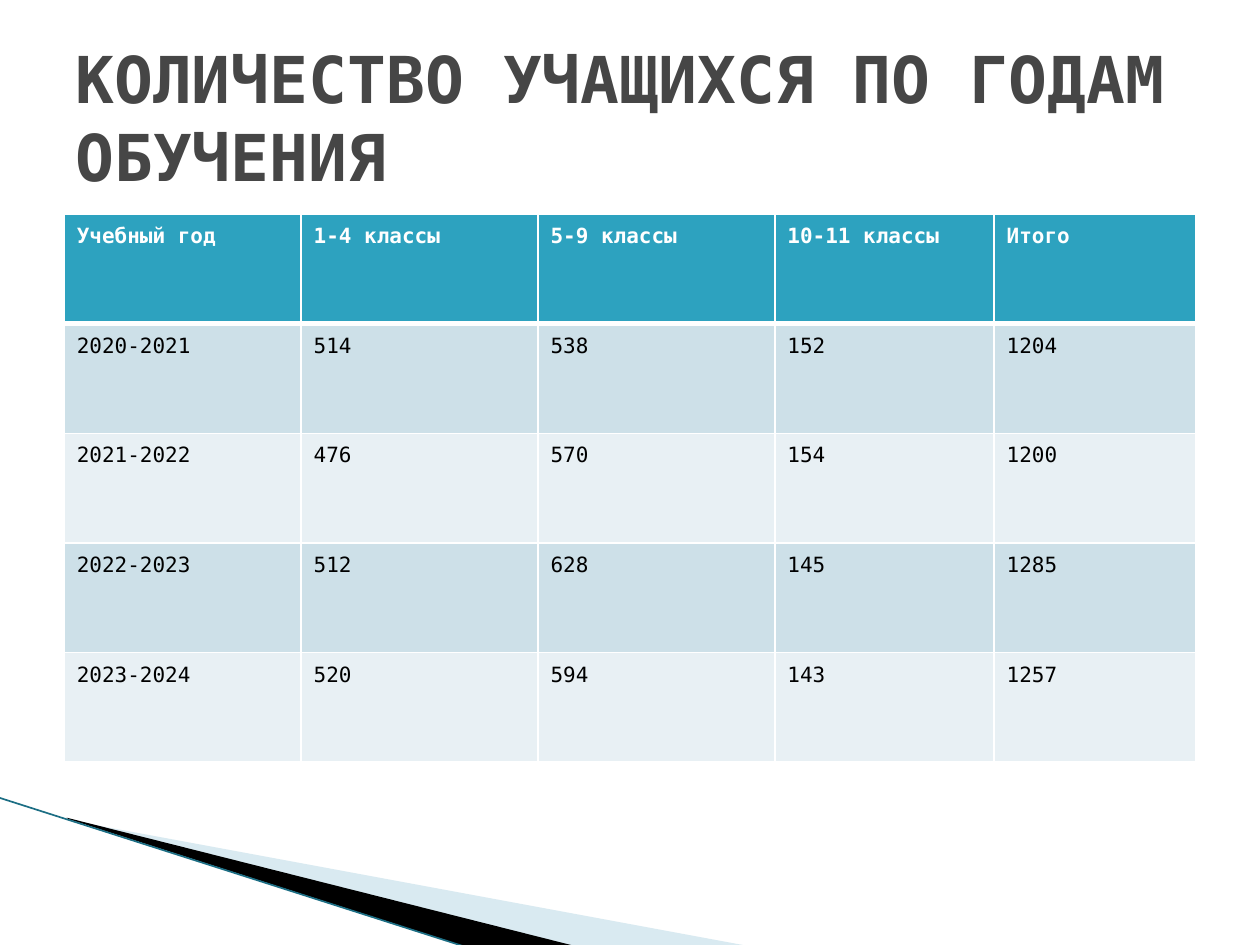
from dataclasses import dataclass

from lxml.etree import SubElement
from pptx import Presentation
from pptx.dml.color import RGBColor
from pptx.enum.shapes import MSO_CONNECTOR
from pptx.enum.text import MSO_ANCHOR as Anchor, PP_ALIGN as Align
from pptx.oxml.ns import qn
from pptx.util import Inches, Pt


@dataclass(frozen=True)
class Theme:
    font: str = "DejaVu Sans Mono"
    title_size: float = 36.9
    table_size: float = 12
    title: str = "464646"
    header: str = "2DA2BF"
    bands: tuple = ("CDE0E8", "E8F0F4")
    white: str = "FFFFFF"
    black: str = "000000"
    pale_wedge: str = "A0CBDC"
    edge: str = "1C6E84"


def write(frame, text, *, font, size, color, bold=False, align=None, spacing=None):
    para = frame.paragraphs[0]
    para.alignment = align
    para.line_spacing = spacing
    span = para.add_run()
    span.text = text
    span.font.name = font
    span.font.size = Pt(size)
    span.font.bold = bold
    span.font.color.rgb = RGBColor.from_string(color)


def set_borders(cell, color, widths):
    props = cell._tc.get_or_add_tcPr()
    for index, (side, width) in enumerate(widths.items()):
        line = SubElement(props, qn(f"a:ln{side}"), w=str(Pt(width)))
        fill = SubElement(line, qn("a:solidFill"))
        SubElement(fill, qn("a:srgbClr"), val=color)
        props.remove(line)
        props.insert(index, line)  # borders come before the cell fill


class Painter:
    def __init__(self, page, theme):
        self.page = page
        self.theme = theme

    def wedge(self, points, color, opacity=100):
        corners = [(Inches(x), Inches(y)) for x, y in points]
        builder = self.page.shapes.build_freeform(*corners[0])
        builder.add_line_segments(corners[1:], close=True)
        shape = builder.convert_to_shape()
        shape.shadow.inherit = False
        shape.line.fill.background()
        shape.fill.solid()
        shape.fill.fore_color.rgb = RGBColor.from_string(color)
        if opacity < 100:
            tint = shape._element.spPr.find(".//" + qn("a:srgbClr"))
            SubElement(tint, qn("a:alpha"), val=str(opacity * 1000))

    def line(self, start, end, color, width):
        ends = [Inches(value) for value in (*start, *end)]
        rule = self.page.shapes.add_connector(MSO_CONNECTOR.STRAIGHT, *ends)
        rule.line.color.rgb = RGBColor.from_string(color)
        rule.line.width = Pt(width)
        SubElement(rule._element.spPr, qn("a:effectLst"))

    def title(self, text, left, top, width, height):
        box = self.page.shapes.add_textbox(
            Inches(left), Inches(top), Inches(width), Inches(height))
        frame = box.text_frame
        frame.word_wrap = True
        frame.vertical_anchor = Anchor.MIDDLE
        write(frame, text, font=self.theme.font, size=self.theme.title_size,
              color=self.theme.title, bold=True)

    def table(self, rows, left, top, widths, row_height):
        theme = self.theme
        grid = self.page.shapes.add_table(
            len(rows), len(widths), Inches(left), Inches(top),
            Inches(sum(widths)), Inches(row_height * len(rows))).table
        for column, width in zip(grid.columns, widths):
            column.width = Inches(width)
        for r, values in enumerate(rows):
            header = r == 0
            fill = theme.header if header else theme.bands[(r - 1) % 2]
            borders = {"L": 1, "R": 1, "T": 3 if r == 1 else 1, "B": 3 if header else 1}
            for c, value in enumerate(values):
                cell = grid.cell(r, c)
                cell.fill.solid()
                cell.fill.fore_color.rgb = RGBColor.from_string(fill)
                set_borders(cell, theme.white, borders)
                write(cell.text_frame, value, font=theme.font, size=theme.table_size,
                      color=theme.white if header else theme.black, bold=header,
                      align=Align.JUSTIFY, spacing=1.15)


def main():
    deck = Presentation()
    deck.slide_width, deck.slide_height = Inches(10), Inches(7.5)
    theme = Theme()
    painter = Painter(deck.slides.add_slide(deck.slide_layouts[6]), theme)

    # Corner decoration
    painter.wedge([(0.55, 6.51), (5.95, 7.51), (4.56, 7.51), (0.55, 6.5)],
                  theme.pale_wedge, opacity=40)
    painter.wedge([(0.53, 6.49), (4.57, 7.51), (3.72, 7.52), (0.54, 6.5)], theme.black)
    painter.line((-0.01, 6.33), (3.71, 7.52), theme.edge, 0.95)

    # Pupils by school year
    rows = [
        ("Учебный год", "1-4 классы", "5-9 классы", "10-11 классы", "Итого"),
        ("2020-2021", "514", "538", "152", "1204"),
        ("2021-2022", "476", "570", "154", "1200"),
        ("2022-2023", "512", "628", "145", "1285"),
        ("2023-2024", "520", "594", "143", "1257"),
    ]
    painter.table(rows, 0.51, 1.7, [1.88, 1.88, 1.88, 1.74, 1.6], 0.87)

    # Heading
    painter.title("КОЛИЧЕСТВО УЧАЩИХСЯ ПО ГОДАМ ОБУЧЕНИЯ", 0.5, 0.3, 9, 1.25)

    deck.save("out.pptx")


if __name__ == "__main__":
    main()
